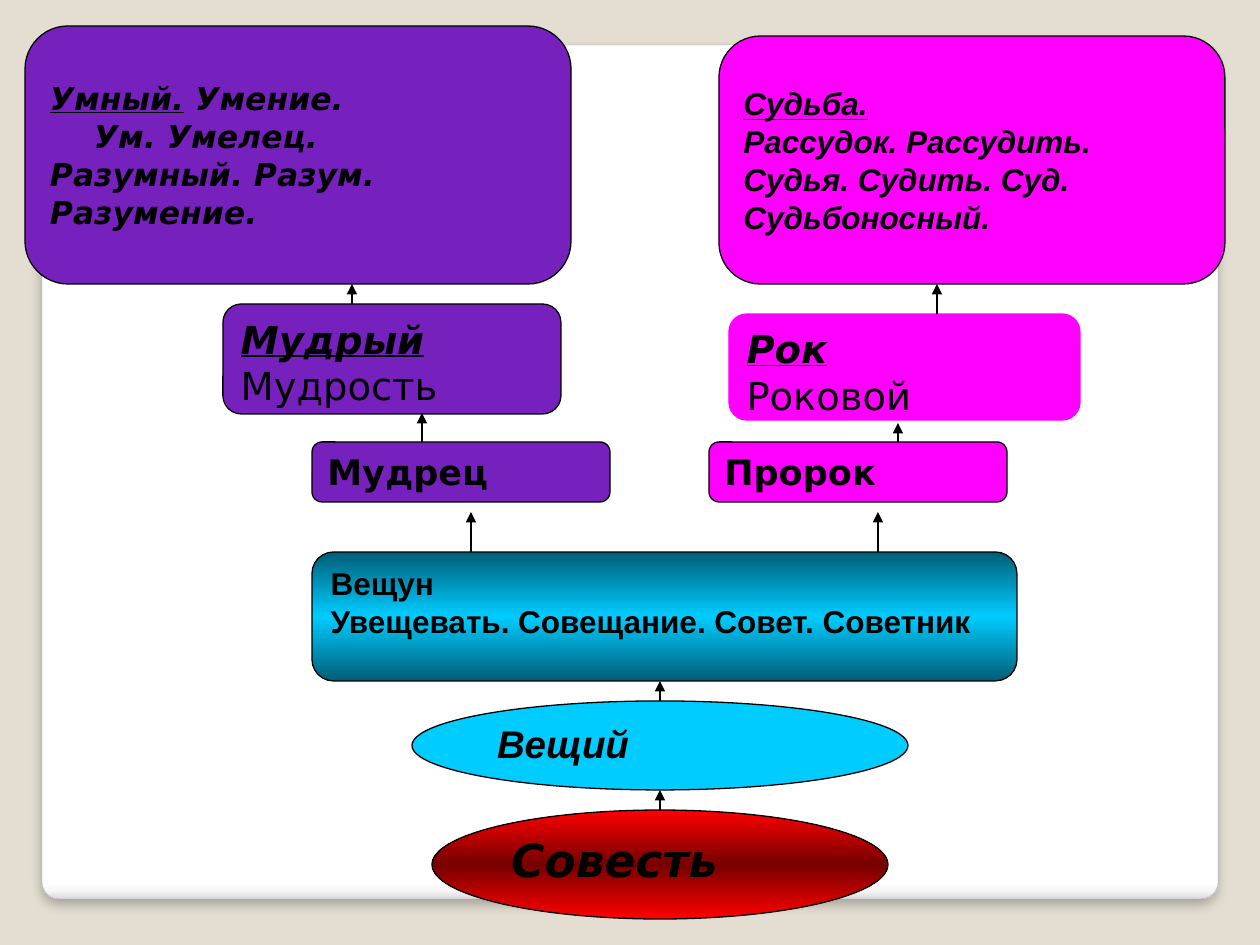
import pptx
import pptx.util
import pptx.oxml
import pptx.dml.color
import pptx.enum.shapes
import pptx.enum.text
import lxml.etree

RGB = pptx.dml.color.RGBColor
KIND = pptx.enum.shapes.MSO_SHAPE
ANCHOR = pptx.enum.text.MSO_ANCHOR
ROUND, OVAL = KIND.ROUNDED_RECTANGLE, KIND.OVAL
TOP, MID = ANCHOR.TOP, ANCHOR.MIDDLE

BLACK = RGB(0x00, 0x00, 0x00)
WHITE = RGB(0xFF, 0xFF, 0xFF)
PALE = RGB(0xF7, 0xF7, 0xF7)
SILVER = RGB(0xDA, 0xDA, 0xDA)
GREY = RGB(0xA4, 0xA4, 0xA4)
SAND = RGB(0xE3, 0xDE, 0xD1)
PURPLE = RGB(0x76, 0x21, 0xBD)
PINK = RGB(0xFF, 0x00, 0xFF)
CYAN = RGB(0x00, 0xCC, 0xFF)
TEAL = RGB(0x00, 0x5E, 0x76)
RED = RGB(0xFF, 0x00, 0x00)
WINE = RGB(0x76, 0x00, 0x00)

SEA = [(0, TEAL), (50, CYAN), (100, TEAL)]
FIRE = [(0, RED), (50, WINE), (100, RED)]
SHEET = [(0, WHITE), (98, WHITE), (99, PALE), (100, SILVER)]

NS = 'xmlns:a="http://schemas.openxmlformats.org/drawingml/2006/main"'
SANS, ARIAL = "DejaVu Sans", "Arial"


def px(n):
    return round(n * 914400 / 126)


def font(name, size, bold=True, italic=False, underline=False):
    return dict(name=name, size=pptx.util.Pt(size), bold=bold,
                italic=italic, underline=underline)


def paint(shape, fill):
    if isinstance(fill, RGB):
        shape.fill.solid()
        shape.fill.fore_color.rgb = fill
        return
    stops = "".join(f'<a:gs pos="{pos * 1000}"><a:srgbClr val="{tone}"/></a:gs>'
                    for pos, tone in fill)
    grad = pptx.oxml.parse_xml(
        f'<a:gradFill {NS} rotWithShape="1"><a:gsLst>{stops}</a:gsLst>'
        '<a:lin ang="5400000" scaled="0"/></a:gradFill>')
    shape.element.spPr.find(pptx.oxml.ns.qn("a:prstGeom")).addnext(grad)


def write(shape, rows, anchor):
    frame = shape.text_frame
    frame.word_wrap = True
    frame.vertical_anchor = anchor
    for i, (indent, runs) in enumerate(rows):
        para = frame.paragraphs[0] if i == 0 else frame.add_paragraph()
        para.alignment = pptx.enum.text.PP_ALIGN.LEFT
        if indent:
            para._p.get_or_add_pPr().set("marL", str(px(indent)))
        for text, style in runs:
            run = para.add_run()
            run.text = text
            run.font.color.rgb = BLACK
            for key, value in style.items():
                setattr(run.font, key, value)


def node(slide, base, box, kind, fill, rows=(), anchor=TOP, edge=BLACK, width=0.75):
    left, top, wide, high = box
    shape = slide.shapes.add_shape(kind, px(base[0] + left), px(base[1] + top),
                                   px(wide), px(high))
    shape.shadow.inherit = False
    paint(shape, fill)
    shape.line.color.rgb = edge
    shape.line.width = pptx.util.Pt(width)
    write(shape, rows, anchor)
    return shape


def arrow(slide, base, x, start, end):
    left, top = base
    line = slide.shapes.add_connector(
        pptx.enum.shapes.MSO_CONNECTOR.STRAIGHT,
        px(left + x), px(top + start), px(left + x), px(top + end))
    line.line.color.rgb = BLACK
    line.line.width = pptx.util.Pt(0.75)
    qn = pptx.oxml.ns.qn
    lxml.etree.SubElement(line.line._get_or_add_ln(), qn("a:tailEnd"), type="triangle")
    lxml.etree.SubElement(line.element.spPr, qn("a:effectLst"))


def panel(slide, box):
    shape = node(slide, (0, 0), box, ROUND, SHEET, edge=GREY, width=0.16)
    shape.adjustments[0] = 0.02
    glow = pptx.oxml.parse_xml(
        f'<a:outerShdw {NS} blurRad="76200" dist="50800" dir="5400000" algn="t" '
        'rotWithShape="0"><a:srgbClr val="000000"><a:alpha val="25000"/>'
        '</a:srgbClr></a:outerShdw>')
    shape.element.spPr.find(pptx.oxml.ns.qn("a:effectLst")).append(glow)


def root(slide, base):
    bold = font(ARIAL, 18)
    node(slide, base, (120, 258, 456, 109), OVAL, FIRE,
         [(0, [("Совесть", font(SANS, 26, italic=True))])])
    node(slide, base, (100, 149, 496, 89), OVAL, CYAN,
         [(0, [("Вещий", font(ARIAL, 22, italic=True))])])
    node(slide, base, (0, 0, 705, 129), ROUND, SEA,
         [(0, [("Вещун", bold)]),
          (0, [("Увещевать. Совещание. Совет. Советник", bold)])])
    arrow(slide, base, 348, 258, 238)
    arrow(slide, base, 348, 149, 129)


def branch(slide, base, fill, edge, parts, arrows):
    (top, rows), (mid, head, tail), (low, word) = parts
    node(slide, base, mid, ROUND, fill,
         [(0, [(head, font(SANS, 22, italic=True, underline=True))]),
          (0, [(tail, font(SANS, 22, bold=False))])], edge=edge)
    node(slide, base, top, ROUND, fill, rows, MID)
    node(slide, base, low, ROUND, fill, [(0, [(word, font(SANS, 20))])], MID)
    for x, start, end in arrows:
        arrow(slide, base, x, start, end)


def mind(slide, base):
    plain = font(SANS, 18, italic=True)
    lead = font(SANS, 18, italic=True, underline=True)
    rows = [(0, [("Умный.", lead), (" Умение.", plain)]),
            (44, [("Ум. Умелец.", plain)]),
            (0, [("Разумный. Разум.", plain)]),
            (0, [("Разумение.", plain)])]
    branch(slide, base, PURPLE, BLACK,
           [((0, 0, 546, 258), rows),
            ((198, 278, 338, 110), "Мудрый", "Мудрость"),
            ((287, 416, 298, 60), "Мудрец")],
           [(446, 526, 486), (397, 416, 387), (327, 278, 258)])


def fate(slide, base):
    plain = font(ARIAL, 18, italic=True)
    lead = font(ARIAL, 18, italic=True, underline=True)
    rows = [(0, [("Судьба.", lead)])]
    rows += [(0, [(text, plain)]) for text in
             ("Рассудок. Рассудить.", "Судья. Судить. Суд.", "Судьбоносный.")]
    branch(slide, base, PINK, PINK,
           [((10, 0, 506, 248), rows),
            ((20, 278, 351, 106), "Рок", "Роковой"),
            ((0, 406, 298, 60), "Пророк")],
           [(169, 516, 476), (189, 406, 387), (228, 278, 248)])


def main():
    deck = pptx.Presentation()
    deck.slide_width, deck.slide_height = px(1260), px(945)
    slide = deck.slides.add_slide(deck.slide_layouts[6])
    slide.background.fill.solid()
    slide.background.fill.fore_color.rgb = SAND
    panel(slide, (42, 45, 1176, 854))
    root(slide, (312, 552))
    mind(slide, (25, 26))
    fate(slide, (709, 36))
    deck.save("out.pptx")


if __name__ == "__main__":
    main()
